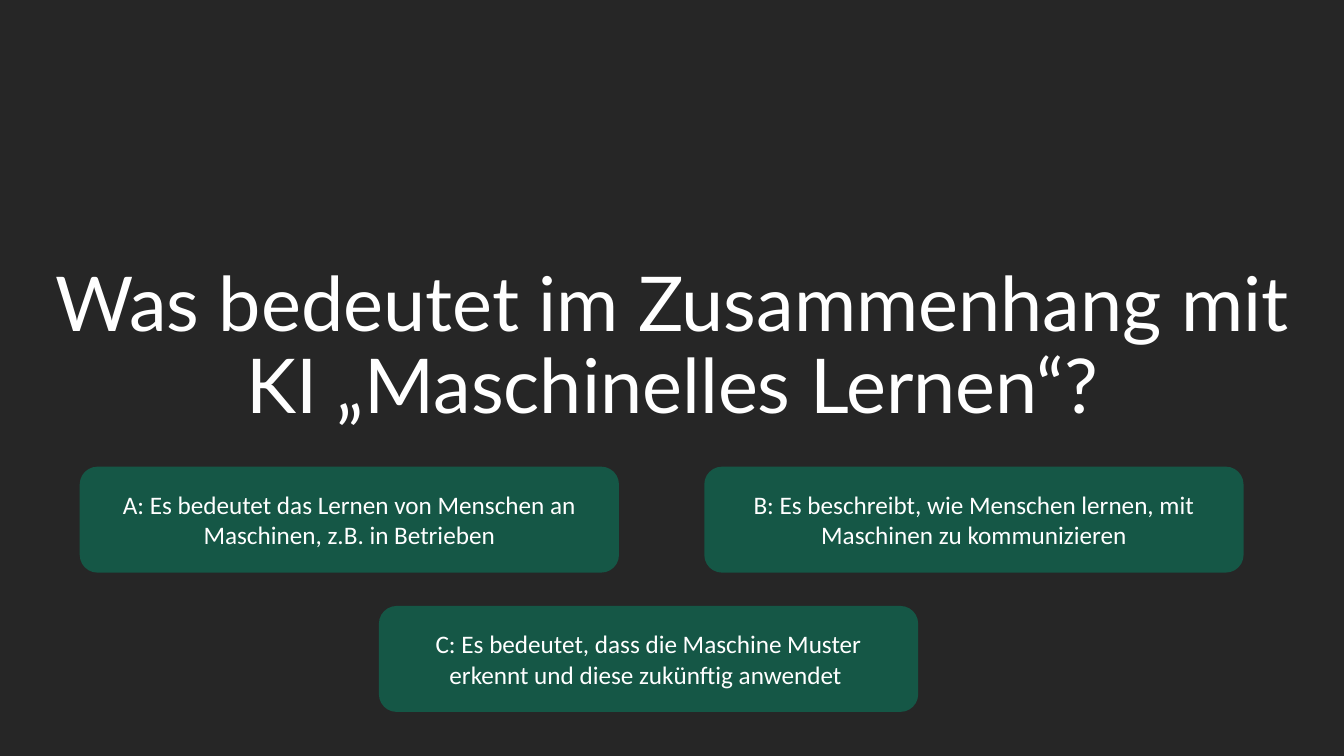
from pptx import Presentation
from pptx.dml.color import RGBColor
from pptx.enum.shapes import MSO_SHAPE as SHAPE
from pptx.enum.text import MSO_ANCHOR as ANCHOR, PP_ALIGN as ALIGN
from pptx.util import Cm, Pt

QUESTION = "Was bedeutet im Zusammenhang mit KI „Maschinelles Lernen“?"
# text, left, top (cm)
ANSWERS = [
    ("A: Es bedeutet das Lernen von Menschen an Maschinen, z.B. in Betrieben", 2.01, 11.76),
    ("B: Es beschreibt, wie Menschen lernen, mit Maschinen zu kommunizieren", 17.75, 11.76),
    ("C: Es bedeutet, dass die Maschine Muster erkennt und diese zukünftig anwendet ", 9.55, 15.27),
]
ANSWER_W, ANSWER_H = 13.59, 2.67
SLIDE_W, SLIDE_H = 33.87, 19.05
BLEED_X, BLEED_Y = 0.17, 0.13

BLACK = RGBColor(0x00, 0x00, 0x00)
CHARCOAL = RGBColor(0x26, 0x26, 0x26)
GREEN = RGBColor(0x15, 0x57, 0x46)
WHITE = RGBColor(0xFF, 0xFF, 0xFF)


def add_panel(s, kind, left, top, width, height, color):
    sp = s.shapes.add_shape(kind, Cm(left), Cm(top), Cm(width), Cm(height))
    sp.shadow.inherit = False
    sp.fill.solid()
    sp.fill.fore_color.rgb = color
    sp.line.fill.background()
    return sp


def write(sp, text, font, size, anchor, spacing=None):
    """Put one centred white paragraph into the shape."""
    tf = sp.text_frame
    tf.word_wrap = True
    tf.vertical_anchor = anchor
    p = tf.paragraphs[0]
    p.alignment = ALIGN.CENTER
    p.line_spacing = spacing
    r = p.add_run()
    r.text = text
    r.font.name = font
    r.font.size = Pt(size)
    r.font.color.rgb = WHITE


prs = Presentation()
prs.slide_width, prs.slide_height = Cm(SLIDE_W), Cm(SLIDE_H)
s = prs.slides.add_slide(prs.slide_layouts[6])
s.background.fill.solid()
s.background.fill.fore_color.rgb = BLACK

add_panel(s, SHAPE.RECTANGLE, -BLEED_X, -BLEED_Y,
          SLIDE_W + 2 * BLEED_X, SLIDE_H + 2 * BLEED_Y, CHARCOAL)

title = s.shapes.add_textbox(Cm(1.09), Cm(4.32), Cm(31.7), Cm(6.63))
write(title, QUESTION, "Lato", 54, ANCHOR.BOTTOM, 0.9)

for text, left, top in ANSWERS:
    answer = add_panel(s, SHAPE.ROUNDED_RECTANGLE, left, top, ANSWER_W, ANSWER_H, GREEN)
    write(answer, text, "Calibri", 18, ANCHOR.MIDDLE)

prs.save("out.pptx")
